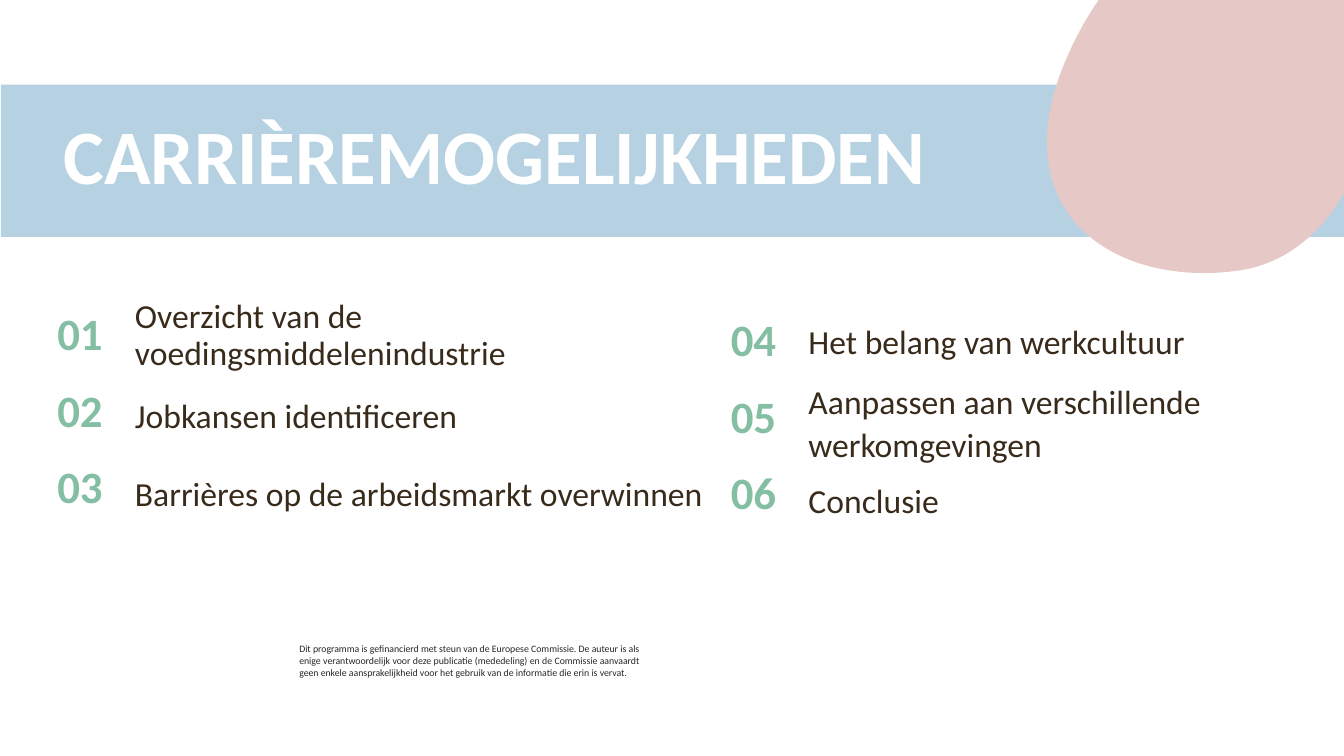
from lxml import etree
from pptx import Presentation
from pptx.dml.color import RGBColor
from pptx.enum import shapes, text
from pptx.oxml import ns
from pptx.util import Inches, Pt

FONT = "Calibri"
BLUE, PINK, GREEN = "B6D1E1", "E6C8C7", "84BFA4"
BROWN, WHITE, GREY = "382B1B", "FFFFFF", "262626"

TITLE = "CARRIÈREMOGELIJKHEDEN"
# Each column: left, top of numbers, top of topics, (topic, topic width)
COLUMNS = [
    (0.47, 2.96, 2.96, [
        ("Overzicht van de voedingsmiddelenindustrie", 5.25),
        ("Jobkansen identificeren", 5.25),
        ("Barrières op de arbeidsmarkt overwinnen", 6.35),
    ]),
    (7.15, 3.02, 3.03, [
        ("Het belang van werkcultuur", 5.62),
        ("Aanpassen aan verschillende werkomgevingen", 6.22),
        ("Conclusie", 5.25),
    ]),
]
NUMBER_WIDTH, ROW_HEIGHT = 0.77, 0.75
NUMBER_STEP, TOPIC_STEP = 0.76, 0.77
DISCLAIMER = (
    "Dit programma is gefinancierd met steun van de Europese Commissie. "
    "De auteur is als enige verantwoordelijk voor deze publicatie (mededeling) "
    "en de Commissie aanvaardt geen enkele aansprakelijkheid voor het gebruik "
    "van de informatie die erin is vervat."
)
# Blob: frame (left, top, width, height), start point,
# then cubic curves (control, control, end)
BLOB_FRAME = (10.39, -0.62, 3.22, 3.32)
BLOB_START = (12.34, -0.54)
BLOB_CURVES = [
    ((11.91, -0.67), (11.46, -0.67), (11.12, -0.29)),
    ((10.79, 0.08), (10.47, 0.68), (10.4, 1.18)),
    ((10.24, 2.33), (11.27, 2.84), (12.31, 2.68)),
    ((13.32, 2.52), (13.83, 1.19), (13.52, 0.24)),
    ((13.43, -0.05), (13.16, -0.18), (12.91, -0.3)),
    ((12.73, -0.39), (12.54, -0.48), (12.34, -0.54)),
]


def color(value):
    return RGBColor.from_string(value)


def paint(shape, fill):
    shape.shadow.inherit = False
    shape.fill.solid()
    shape.fill.fore_color.rgb = color(fill)
    shape.line.fill.background()


def write(box, words, size, ink, bold=False, anchor=text.MSO_ANCHOR.TOP,
          align=text.PP_ALIGN.LEFT, spacing=1.0):
    frame = box.text_frame
    frame.text = words
    frame.word_wrap = True
    frame.auto_size = text.MSO_AUTO_SIZE.NONE
    frame.vertical_anchor = anchor
    para = frame.paragraphs[0]
    para.alignment = align
    para.line_spacing = spacing
    font = para.runs[0].font
    font.name, font.size, font.bold = FONT, Pt(size), bold
    font.color.rgb = color(ink)


def add_text(slide, left, top, width, height, *args, **style):
    box = slide.shapes.add_textbox(
        Inches(left), Inches(top), Inches(width), Inches(height))
    write(box, *args, **style)


def add_blob(slide):
    left, top, width, height = map(Inches, BLOB_FRAME)
    right, bottom = left + width, top + height
    builder = slide.shapes.build_freeform(left, top)
    builder.add_line_segments([(right, top), (right, bottom), (left, bottom)])
    blob = builder.convert_to_shape()
    paint(blob, PINK)

    # Curves inside the frame
    outline = blob._element.find(".//" + ns.qn("a:path"))
    for child in list(outline):
        outline.remove(child)
    commands = [("a:moveTo", [BLOB_START])]
    commands += [("a:cubicBezTo", curve) for curve in BLOB_CURVES]
    for tag, points in commands:
        command = etree.SubElement(outline, ns.qn(tag))
        for x, y in points:
            etree.SubElement(command, ns.qn("a:pt"),
                             x=str(Inches(x) - left), y=str(Inches(y) - top))
    etree.SubElement(outline, ns.qn("a:close"))


def main():
    deck = Presentation()
    deck.slide_width, deck.slide_height = Inches(13.33), Inches(7.5)
    slide = deck.slides.add_slide(deck.slide_layouts[5])

    # Title band, placed behind the title
    band = slide.shapes.add_shape(
        shapes.MSO_SHAPE.RECTANGLE,
        Inches(0.01), Inches(0.84), Inches(13.33), Inches(1.51))
    paint(band, BLUE)
    title = slide.shapes.title
    title._element.addprevious(band._element)
    title.left, title.top = Inches(0.53), Inches(1.29)
    title.width, title.height = Inches(9.35), Inches(0.76)
    write(title, TITLE, 55, WHITE, bold=True, spacing=Pt(46))

    # Numbered topics in two columns
    middle = text.MSO_ANCHOR.MIDDLE
    number = 0
    for left, number_top, topic_top, topics in COLUMNS:
        for row, (topic, width) in enumerate(topics):
            number += 1
            add_text(slide, left, number_top + row * NUMBER_STEP,
                     NUMBER_WIDTH, ROW_HEIGHT, f"{number:02}", 32, GREEN,
                     bold=True, anchor=middle, spacing=0.9)
            add_text(slide, left + NUMBER_WIDTH, topic_top + row * TOPIC_STEP,
                     width, ROW_HEIGHT, topic, 24, BROWN,
                     anchor=middle, spacing=1.07 if row else 0.9)

    # Corner blob
    add_blob(slide)

    # Funding disclaimer
    add_text(slide, 2.87, 6.33, 3.57, 0.48, DISCLAIMER, 7, GREY,
             align=text.PP_ALIGN.JUSTIFY)

    deck.save("out.pptx")


if __name__ == "__main__":
    main()
